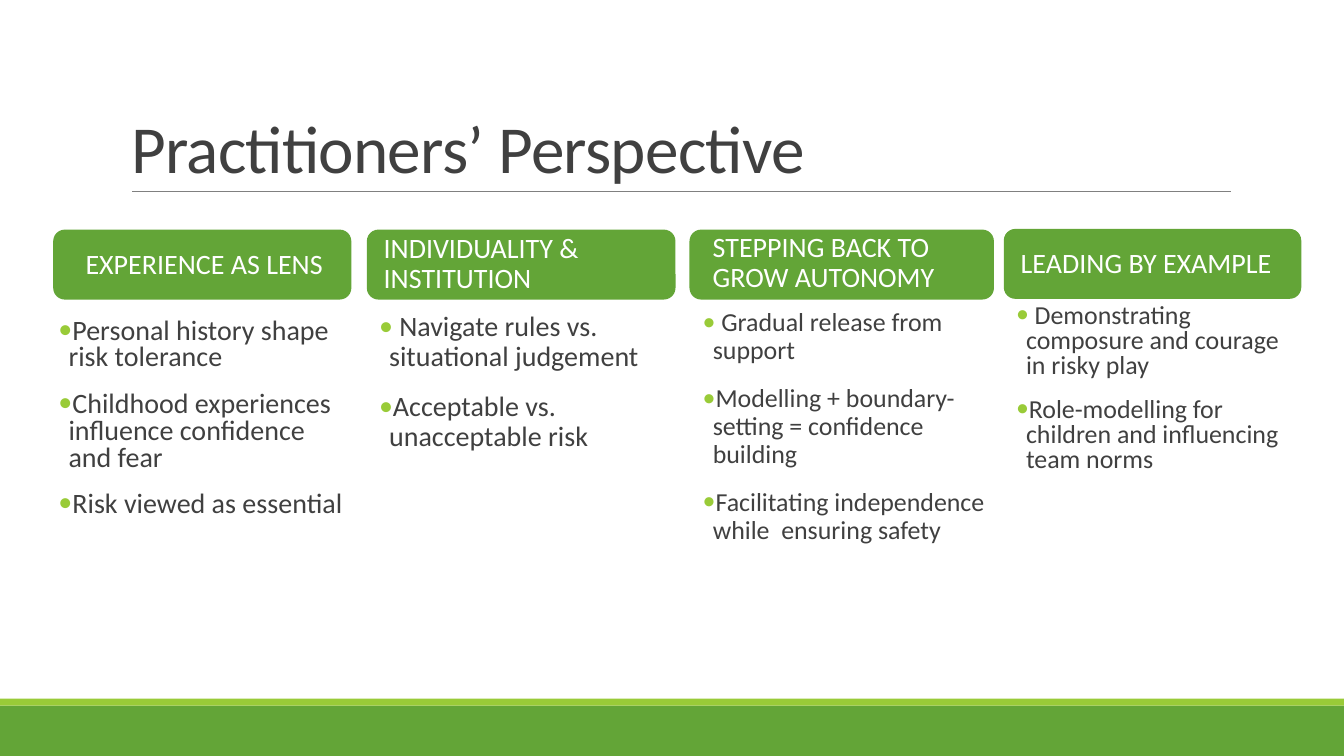
from pptx import Presentation
from pptx.util import Pt
from pptx.dml.color import RGBColor
from pptx.enum.shapes import MSO_SHAPE as SHAPE, MSO_CONNECTOR as CONN
from pptx.enum.text import MSO_ANCHOR as ANCHOR, MSO_AUTO_SIZE as FIT, PP_ALIGN as ALIGN
from pptx.oxml.ns import qn
from lxml import etree

GREEN, LIME, INK, GREY, WHITE = "63A537", "99CB38", "404040", "808080", "FFFFFF"
SLIDE_W, SLIDE_H = 960, 540

# Each column: card box, header offset, body offset, body size, text size, line spacing
COLUMNS = [
    dict(card=(38, 164, 213, 50), header="EXPERIENCE AS LENS", head_at=(16, -3.5),
         body_at=(3.75, 60), body_size=(229, 152), size=20, spacing=0.8,
         points=["Personal history shape\nrisk tolerance",
                 "Childhood experiences influence confidence\nand fear",
                 "Risk viewed as essential"]),
    dict(card=(262, 164, 220.5, 50), header="INDIVIDUALITY & INSTITUTION", head_at=(5, -4),
         body_at=(8.75, 55.5), body_size=(204, 114.5), size=20, spacing=0.9,
         points=[" Navigate rules vs. situational judgement",
                 "Acceptable vs. unacceptable risk"]),
    dict(card=(492.5, 164, 217.5, 50), header="STEPPING BACK TO \nGROW AUTONOMY",
         head_at=(9.5, -5), body_at=(9.5, 53.5), body_size=(211, 188), size=18.5, spacing=0.9,
         points=[" Gradual release from support",
                 "Modelling + boundary-setting = confidence building",
                 "Facilitating independence while  ensuring safety"]),
    dict(card=(717, 163.5, 212.5, 50), header="LEADING BY EXAMPLE", head_at=(5, -3.5),
         body_at=(8.75, 50.5), body_size=(196, 141), size=18.5, spacing=0.8,
         points=[" Demonstrating composure and courage in risky play",
                 "Role-modelling for children and influencing team norms"]),
]


def rgb(value):
    return RGBColor.from_string(value)


def add_bullet(p, color, indent=7.2):
    pPr = p._p.get_or_add_pPr()
    pPr.set("marL", str(Pt(indent)))
    pPr.set("indent", str(-Pt(indent)))
    bu_clr = etree.SubElement(pPr, qn("a:buClr"))
    etree.SubElement(bu_clr, qn("a:srgbClr")).set("val", color)
    etree.SubElement(pPr, qn("a:buFont")).set("typeface", "Calibri")
    etree.SubElement(pPr, qn("a:buChar")).set("char", "•")


def write(tf, paragraphs, size=20, color=INK, spacing=0.9, anchor=ANCHOR.TOP,
          side=7.2, bullet=None, tracking=None):
    tf.word_wrap, tf.auto_size, tf.vertical_anchor = True, FIT.NONE, anchor
    tf.margin_left = tf.margin_right = Pt(side)
    tf.margin_top = tf.margin_bottom = Pt(3.6)
    for i, text in enumerate(paragraphs):
        p = tf.add_paragraph() if i else tf.paragraphs[0]
        p.text = text
        p.alignment, p.line_spacing = ALIGN.LEFT, spacing
        p.space_before, p.space_after = Pt(12 if i else 0), Pt(2)
        if bullet:
            add_bullet(p, bullet)
        for r in p.runs:
            r.font.name, r.font.size = "Calibri", Pt(size)
            r.font.color.rgb = rgb(color)
            if tracking:
                r.font._element.set("spc", str(tracking))


def add_block(s, kind, box, color):
    sp = s.shapes.add_shape(kind, *map(Pt, box))
    sp.shadow.inherit = False
    sp.fill.solid()
    sp.fill.fore_color.rgb = rgb(color)
    sp.line.fill.background()
    return sp


def add_text(s, box, paragraphs, **fmt):
    write(s.shapes.add_textbox(*map(Pt, box)).text_frame, paragraphs, **fmt)


def add_footer(s, x, y, w, h, stripe=5):
    add_block(s, SHAPE.RECTANGLE, (x, y + stripe, w, h - stripe), GREEN)
    add_block(s, SHAPE.RECTANGLE, (x, y, w, stripe), LIME)


def add_title(s, x, y, w, h, text):
    # Title text
    title = s.shapes.title
    title.left, title.top, title.width, title.height = map(Pt, (x, y, w, h))
    write(title.text_frame, [text], size=48, spacing=0.85, anchor=ANCHOR.BOTTOM, tracking=-50)
    # Rule under the title
    rule = s.shapes.add_connector(CONN.STRAIGHT, Pt(x + 8), Pt(y + h), Pt(x + w + 1), Pt(y + h))
    rule.line.color.rgb, rule.line.width = rgb(GREY), Pt(0.5)
    etree.SubElement(rule._element.spPr, qn("a:effectLst"))


def add_column(s, card, header, head_at, body_at, body_size, size, spacing, points):
    x, y = card[:2]
    # Header card and its label
    add_block(s, SHAPE.ROUNDED_RECTANGLE, card, GREEN)
    add_text(s, (x + head_at[0], y + head_at[1], 229, 58), [header],
             color=WHITE, anchor=ANCHOR.MIDDLE)
    # Bulleted points
    add_text(s, (x + body_at[0], y + body_at[1], *body_size), points,
             size=size, spacing=spacing, side=0, bullet=LIME)


def main():
    prs = Presentation()
    prs.slide_width, prs.slide_height = Pt(SLIDE_W), Pt(SLIDE_H)
    s = prs.slides.add_slide(prs.slide_layouts[5])
    add_footer(s, 0, 499, SLIDE_W, 41)
    add_title(s, 86.5, 22.5, 792, 114.5, "Practitioners’ Perspective")
    for column in COLUMNS:
        add_column(s, **column)
    prs.save("out.pptx")


if __name__ == "__main__":
    main()
